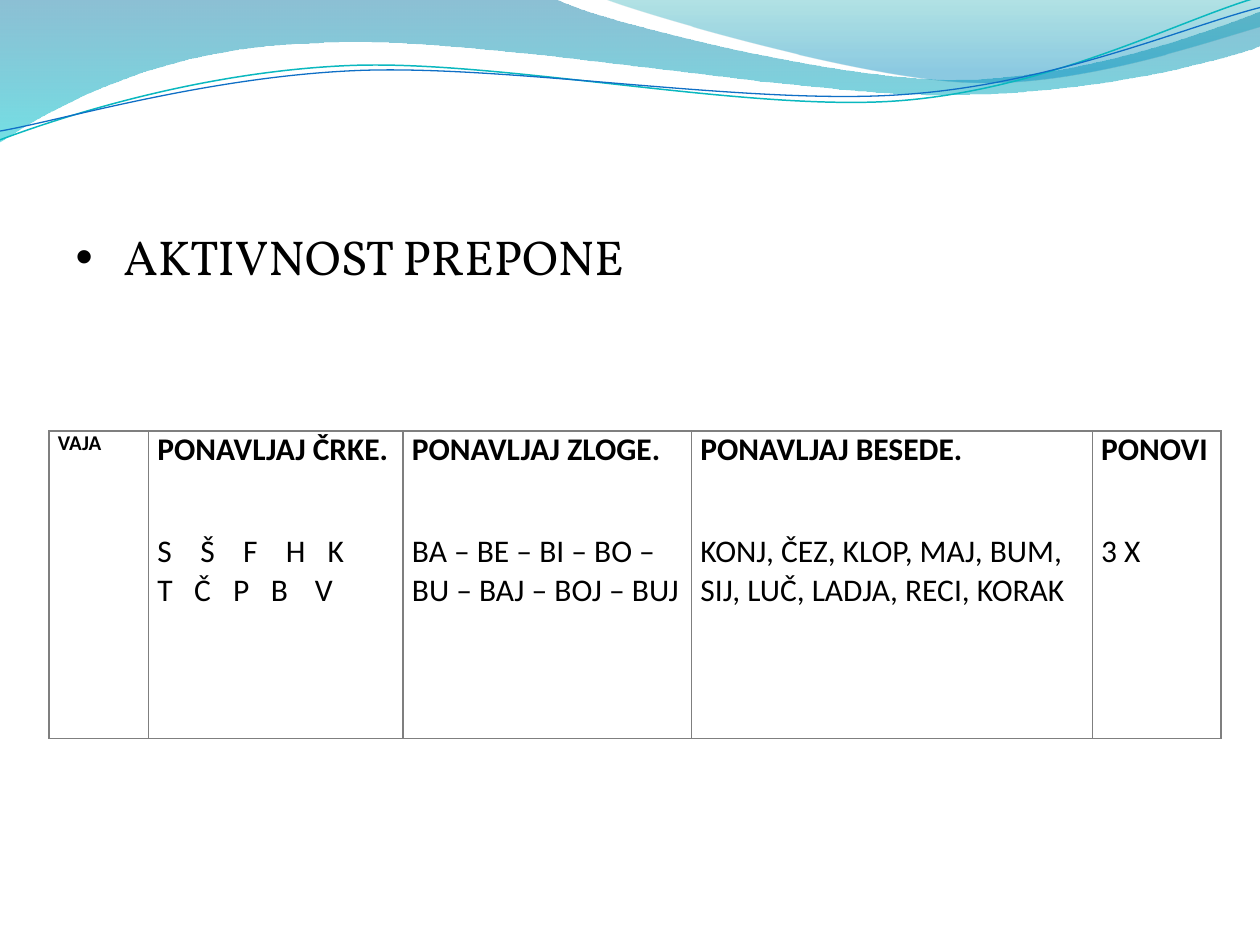
import math

import pptx
import pptx.dml.color
import pptx.oxml.ns
import pptx.util
from lxml import etree

SLIDE_WIDTH, SLIDE_HEIGHT = 10, 7.5
HEADING = "AKTIVNOST PREPONE"
COLUMNS = [
    ("VAJA", 0.79, 12, []),
    ("PONAVLJAJ ČRKE.", 2.02, 18, ["S\tŠ\tF\tH\tK", "T\tČ\tP\tB\tV"]),
    ("PONAVLJAJ ZLOGE.", 2.29, 18, ["BA – BE – BI – BO – BU – BAJ – BOJ – BUJ"]),
    ("PONAVLJAJ BESEDE.", 3.18, 18,
     ["KONJ, ČEZ, KLOP, MAJ, BUM, SIJ, LUČ, LADJA, RECI, KORAK"]),
    ("PONOVI", 1.02, 18, ["3 X"]),
]
LETTER_TABS = [(0.34, 0.68, 1.02, 1.35), (0.29, 0.6, 0.9, 1.25)]
ROW_HEIGHTS = [0.81, 1.63]
TABLE_LEFT, TABLE_TOP = 0.39, 3.42
BORDER = "7F7F7F"

BANDS = [
    ([[(0, 0)], [(4.4, -0.01)],
      [(4.76, 0.17), (6.64, 0.63), (7.58, 0.63)],
      [(8.53, 0.63), (9.58, 0.26), (10, 0.09)], [(10.01, 0.36)],
      [(9.83, 0.44), (8.7, 0.76), (7.46, 0.75)],
      [(6.22, 0.75), (3.82, 0.28), (2.57, 0.34)],
      [(1.29, 0.36), (0.46, 0.83), (-0.01, 1.13)], [(0, 0)]],
     [(0, "0074A1", 45), (1, "00C6CF", 55)]),
    ([[(4.79, -0.01)],
      [(5.09, 0.11), (6.82, 0.62), (7.69, 0.65)],
      [(8.56, 0.69), (9.61, 0.32), (10, 0.21)], [(10, 0)], [(4.79, -0.01)]],
     [(0, "00A1A9", 30), (0.8, "008BBF", 45)]),
]
WAVES = [
    ([[(0, 1.11)], [(0.48, 0.93), (1.58, 0.57), (2.77, 0.52)],
      [(3.95, 0.47), (5.93, 0.89), (7.13, 0.8)],
      [(8.33, 0.71), (9.38, 0.15), (9.98, -0.02)]], "0AB8BF", 0.85),
    ([[(0, 1.04)], [(0.47, 0.96), (1.64, 0.61), (2.83, 0.56)],
      [(4.03, 0.51), (5.97, 0.84), (7.17, 0.75)],
      [(8.36, 0.67), (9.41, 0.21), (10, 0.06)]], "0F6FC6", 0.75),
]
WAVE_TILT = -2.7
WAVE_CENTER = (4.99, 0.58)

inch = pptx.util.Inches
qn = pptx.oxml.ns.qn


def rgb(value):
    return pptx.dml.color.RGBColor.from_string(value)


def turned(point, degrees):
    angle = math.radians(degrees)
    dx, dy = (value - center for value, center in zip(point, WAVE_CENTER))
    return (WAVE_CENTER[0] + dx * math.cos(angle) - dy * math.sin(angle),
            WAVE_CENTER[1] + dx * math.sin(angle) + dy * math.cos(angle))


def add_outline(slide, segments, close):
    start, *rest = [(inch(x), inch(y)) for segment in segments for x, y in segment]
    builder = slide.shapes.build_freeform(*start)
    builder.add_line_segments(rest, close=close)
    outline = builder.convert_to_shape()
    outline.shadow.inherit = False
    lines = iter(list(outline._element.iter(qn("a:lnTo"))))
    for segment in segments[1:]:
        steps = [next(lines) for _ in segment]
        if len(steps) == 3:
            curve = etree.Element(qn("a:cubicBezTo"))
            steps[0].addprevious(curve)
            for step in steps:
                curve.append(step[0])
                step.getparent().remove(step)
    return outline


def add_band(slide, segments, stops):
    band = add_outline(slide, segments, True)
    band.line.fill.background()
    band.fill.gradient()
    band.fill.gradient_angle = 270
    for stop, (position, color, _) in zip(band.fill.gradient_stops, stops):
        stop.position = position
        stop.color.rgb = rgb(color)
    for element, (_, _, opacity) in zip(band._element.spPr.iter(qn("a:srgbClr")), stops):
        etree.SubElement(element, qn("a:alpha")).set("val", str(opacity * 1000))


def add_wave(slide, segments, color, width):
    level = [[turned(point, -WAVE_TILT) for point in segment] for segment in segments]
    wave = add_outline(slide, level, False)
    wave.rotation = WAVE_TILT
    wave.fill.background()
    wave.line.color.rgb = rgb(color)
    wave.line.width = pptx.util.Pt(width)


def set_borders(cell, visible):
    properties = cell._tc.get_or_add_tcPr()
    for side in "LRTB":
        border = etree.SubElement(properties, qn("a:ln" + side))
        if side in visible:
            border.set("w", str(pptx.util.Pt(1)))
            fill = etree.SubElement(border, qn("a:solidFill"))
            etree.SubElement(fill, qn("a:srgbClr")).set("val", BORDER)
        else:
            etree.SubElement(border, qn("a:noFill"))


def set_tabs(paragraph, positions):
    tabs = etree.SubElement(paragraph._p.get_or_add_pPr(), qn("a:tabLst"))
    for position in positions:
        tab = etree.SubElement(tabs, qn("a:tab"))
        tab.set("pos", str(inch(position)))
        tab.set("algn", "l")


def format_text(paragraph, font_name, size, bold=False):
    for run in paragraph.runs:
        run.font.name = font_name
        run.font.size = pptx.util.Pt(size)
        run.font.bold = bold
        run.font.color.rgb = rgb("000000")


def fill_cell(cell, lines, size, bold, borders):
    cell.margin_left = cell.margin_right = inch(0.07)
    cell.margin_top = cell.margin_bottom = 0
    set_borders(cell, borders)
    cell.fill.background()
    cell.text_frame.text = "\n".join(lines)
    for paragraph, tabs in zip(cell.text_frame.paragraphs, LETTER_TABS):
        if "\t" in paragraph.text:
            set_tabs(paragraph, tabs)
        format_text(paragraph, "Calibri", size, bold)


def add_exercises(slide):
    widths = [width for _, width, _, _ in COLUMNS]
    exercises = slide.shapes.add_table(
        len(ROW_HEIGHTS), len(COLUMNS), inch(TABLE_LEFT), inch(TABLE_TOP),
        inch(sum(widths)), inch(sum(ROW_HEIGHTS))).table
    exercises.first_row = exercises.horz_banding = False
    for row, height in zip(exercises.rows, ROW_HEIGHTS):
        row.height = inch(height)
    for index, (header, width, header_size, lines) in enumerate(COLUMNS):
        exercises.columns[index].width = inch(width)
        fill_cell(exercises.cell(0, index), [header], header_size, True, "LRT")
        fill_cell(exercises.cell(1, index), lines, 18, False, "LRB")


def add_heading(slide):
    heading = slide.placeholders[1]
    heading.left, heading.top = inch(0.5), inch(1.75)
    heading.width, heading.height = inch(9), inch(4.95)
    heading.text_frame.text = HEADING
    paragraph = heading.text_frame.paragraphs[0]
    properties = paragraph._p.get_or_add_pPr()
    properties.set("marL", str(inch(0.38)))
    properties.set("indent", str(inch(-0.38)))
    paragraph.space_before = 0
    etree.SubElement(properties, qn("a:buFont")).set("typeface", "Arial")
    etree.SubElement(properties, qn("a:buChar")).set("char", "•")
    format_text(paragraph, "Vollkorn", 28)


def main():
    presentation = pptx.Presentation()
    presentation.slide_width = inch(SLIDE_WIDTH)
    presentation.slide_height = inch(SLIDE_HEIGHT)
    slide = presentation.slides.add_slide(presentation.slide_layouts[1])
    empty_title = slide.shapes.title._element
    empty_title.getparent().remove(empty_title)
    for band in BANDS:
        add_band(slide, *band)
    for wave in WAVES:
        add_wave(slide, *wave)
    add_exercises(slide)
    add_heading(slide)
    presentation.save("out.pptx")


if __name__ == "__main__":
    main()
